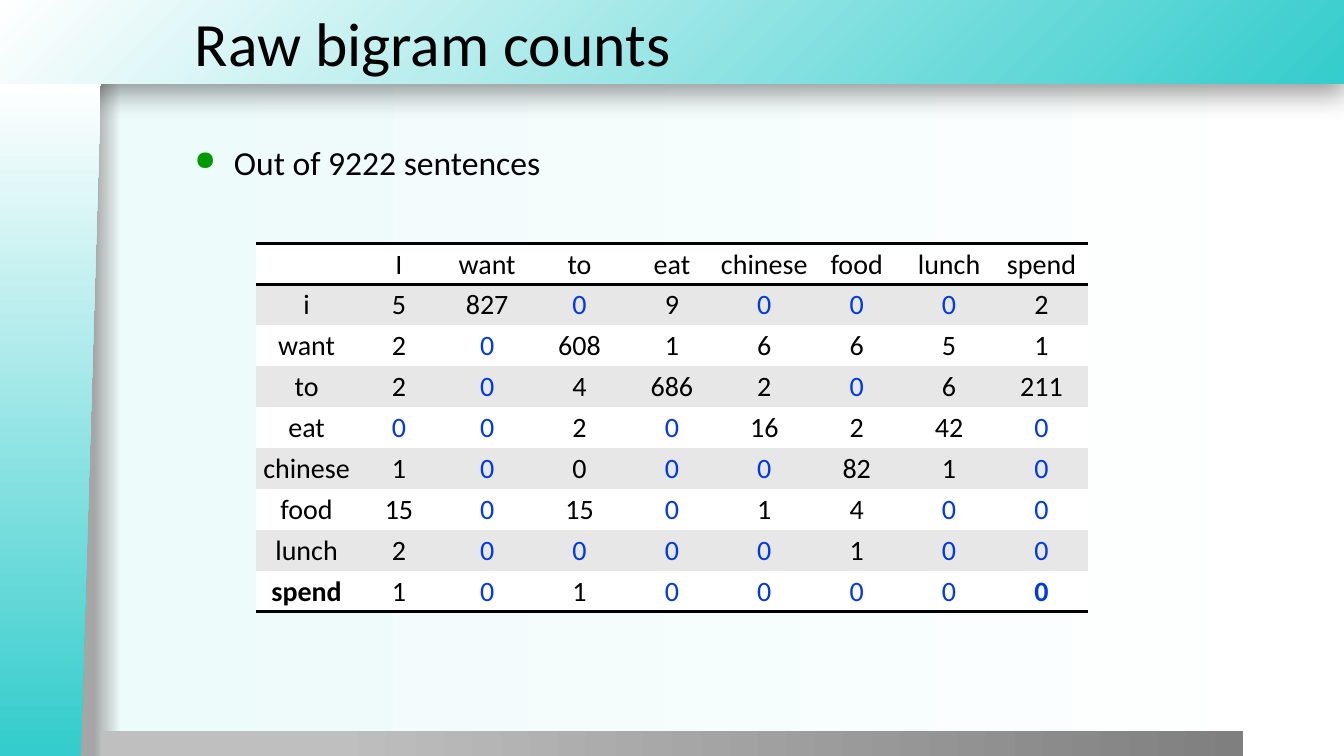
from lxml.etree import SubElement
from pptx import Presentation
from pptx.dml.color import RGBColor
from pptx.enum.shapes import MSO_SHAPE as Preset
from pptx.enum.text import MSO_ANCHOR as Anchor, PP_ALIGN as Align
from pptx.oxml.ns import qn
from pptx.util import Pt

FONT = "Calibri"
BLACK, WHITE, TEAL = "000000", "FFFFFF", "34CCCC"
BAND, ZERO_BLUE, BULLET_GREEN = "E7E7E7", "0039E5", "009900"
NO_TABLE_STYLE = "{2D5ABB26-0587-4C30-8999-92F81FD0307C}"

WORDS = ["want", "to", "eat", "chinese", "food", "lunch", "spend"]
COUNTS = [
    [5, 827, 0, 9, 0, 0, 0, 2],
    [2, 0, 608, 1, 6, 6, 5, 1],
    [2, 0, 4, 686, 2, 0, 6, 211],
    [0, 0, 2, 0, 16, 2, 42, 0],
    [1, 0, 0, 0, 0, 82, 1, 0],
    [15, 0, 15, 0, 1, 4, 0, 0],
    [2, 0, 0, 0, 0, 1, 0, 0],
    [1, 0, 1, 0, 0, 0, 0, 0],
]
BLACK_ZERO = (5, 3)  # chinese / to
BOLD_CELLS = {(8, 0), (8, 8)}


def color(value):
    return RGBColor.from_string(value)


def add_xml(parent, tag, **attributes):
    return SubElement(parent, qn(tag), {key: str(value) for key, value in attributes.items()})


def add_xml_color(parent, value):
    return add_xml(parent, "a:srgbClr", val=value)


def set_gradient(fill, element, stops, from_corner=False):
    fill.gradient()
    gradient = next(element.iter(qn("a:gradFill")))
    gradient.clear()
    gradient.set("rotWithShape", "1")
    stop_list = add_xml(gradient, "a:gsLst")
    for percent, value in stops:
        add_xml_color(add_xml(stop_list, "a:gs", pos=percent * 1000), value)
    if from_corner:
        circle = add_xml(gradient, "a:path", path="circle")
        add_xml(circle, "a:fillToRect", l=100000, t=100000)
    else:
        add_xml(gradient, "a:lin", ang=0, scaled=0)


def add_panel(slide, preset, box, stops, from_corner=False):
    shape = slide.shapes.add_shape(preset, *map(Pt, box))
    shape.shadow.inherit = False
    shape.line.fill.background()
    set_gradient(shape.fill, shape._element, stops, from_corner)
    return shape


def add_shadow(shape):
    effects = next(shape._element.iter(qn("a:effectLst")))
    shadow = add_xml(effects, "a:outerShdw", blurRad=Pt(20), dist=Pt(6),
                     dir=90 * 60000, algn="t", rotWithShape=0)
    add_xml(add_xml_color(shadow, BLACK), "a:alpha", val=40000)


def add_run(paragraph, text, size, value=BLACK, bold=False):
    run = paragraph.add_run()
    run.text = text
    run.font.name = FONT
    run.font.size = Pt(size)
    run.font.bold = bold
    run.font.color.rgb = color(value)


def add_text(slide, box, text, size, anchor=Anchor.TOP):
    frame = slide.shapes.add_textbox(*map(Pt, box)).text_frame
    frame.word_wrap = True
    frame.vertical_anchor = anchor
    paragraph = frame.paragraphs[0]
    add_run(paragraph, text, size)
    return paragraph


def add_bullet(paragraph):
    properties = paragraph._p.get_or_add_pPr()
    properties.set("marL", str(Pt(28)))
    properties.set("indent", str(Pt(-28)))
    add_xml_color(add_xml(properties, "a:buClr"), BULLET_GREEN)
    add_xml(properties, "a:buSzPct", val=80000)
    add_xml(properties, "a:buChar", char="●")


def add_border(cell, tag):
    line = add_xml(cell._tc.get_or_add_tcPr(), tag, w=Pt(2))
    add_xml_color(add_xml(line, "a:solidFill"), BLACK)


def style_cell(cell, row, last_row):
    cell.margin_left = cell.margin_right = cell.margin_top = Pt(0.75)
    cell.margin_bottom = Pt(0)
    cell.vertical_anchor = Anchor.MIDDLE
    # Borders come before the fill in the cell properties
    if row == 0:
        add_border(cell, "a:lnT")
    if row in (0, last_row):
        add_border(cell, "a:lnB")
    cell.fill.solid()
    cell.fill.fore_color.rgb = color(BAND if row % 2 else WHITE)


def add_count_table(slide):
    rows = [["", "I", *WORDS]]
    rows += [[word, *map(str, counts)] for word, counts in zip(["i", *WORDS], COUNTS)]
    widths = [72, 60] + [66] * len(WORDS)
    row_height = 29.2
    frame = slide.shapes.add_table(len(rows), len(widths), Pt(183), Pt(174),
                                   Pt(sum(widths)), Pt(row_height * len(rows)))
    next(frame._element.iter(qn("a:tableStyleId"))).text = NO_TABLE_STYLE
    table = frame.table
    table.first_row = table.horz_banding = False
    for column, width in zip(table.columns, widths):
        column.width = Pt(width)
    for row, texts in enumerate(rows):
        table.rows[row].height = Pt(row_height)
        for column, text in enumerate(texts):
            cell = table.cell(row, column)
            style_cell(cell, row, len(rows) - 1)
            if text:
                paragraph = cell.text_frame.paragraphs[0]
                paragraph.alignment = Align.CENTER
                is_blue = text == "0" and (row, column) != BLACK_ZERO
                add_run(paragraph, text, 20, ZERO_BLUE if is_blue else BLACK,
                        (row, column) in BOLD_CELLS)


def main():
    presentation = Presentation()
    presentation.slide_width, presentation.slide_height = Pt(960), Pt(540)
    slide = presentation.slides.add_slide(presentation.slide_layouts[6])

    # Background and frame
    set_gradient(slide.background.fill, slide._element,
                 [(7, "A6A6A6"), (9, "EDFBFB"), (100, WHITE)])
    teal_fade = [(0, TEAL), (100, WHITE)]
    title_bar = add_panel(slide, Preset.RECTANGLE, (-0.5, 0, 960.5, 60), teal_fade, True)
    add_shadow(title_bar)
    add_panel(slide, Preset.RECTANGLE, (72, 522, 816, 18.5), [(20, "BFBFBF"), (100, "7F7F7F")])
    side_bar = add_panel(slide, Preset.FLOWCHART_MANUAL_INPUT, (-204.5, 264.5, 481, 72),
                         [(1, TEAL), (100, WHITE)])
    side_bar.rotation = 270
    next(side_bar._element.iter(qn("a:xfrm"))).set("flipV", "1")

    # Title and bullet
    add_text(slide, (132, 0, 828, 60), "Raw bigram counts", 44, Anchor.MIDDLE)
    add_bullet(add_text(slide, (132, 98, 756, 417), "Out of 9222 sentences", 24))

    # Bigram counts
    add_count_table(slide)
    presentation.save("out.pptx")


if __name__ == "__main__":
    main()
